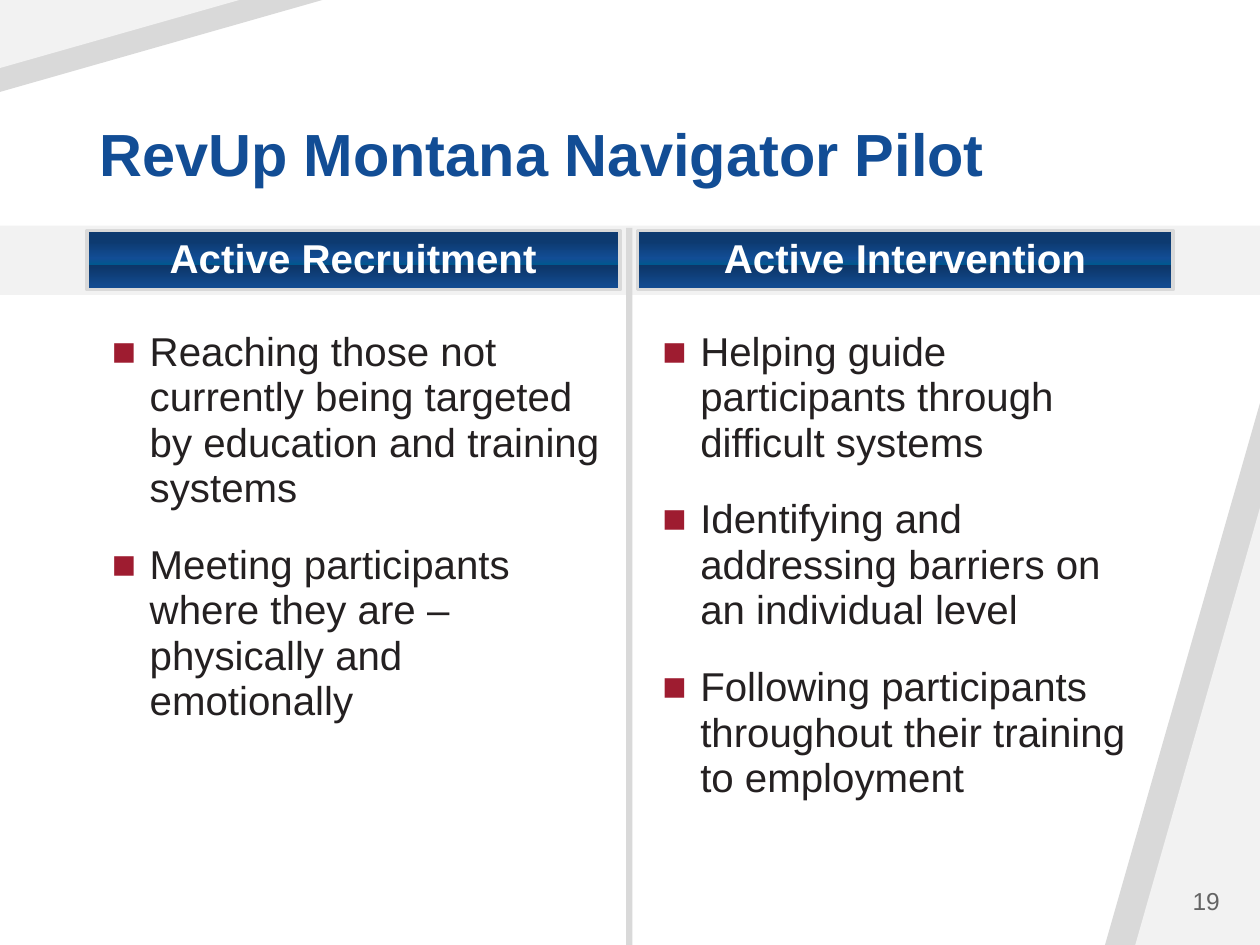
from lxml.etree import SubElement
from pptx import Presentation
from pptx.dml.color import RGBColor
from pptx.enum.shapes import MSO_SHAPE
from pptx.enum.text import MSO_ANCHOR, PP_ALIGN
from pptx.oxml import parse_xml
from pptx.oxml.ns import nsdecls, qn
from pptx.util import Inches, Pt

GRAY, PALE, BLUE, RED = "D9D9D9", "F2F2F2", "124D95", "9E1C30"
STOPS = [(19, "0D3A70"), (47, BLUE), (58, "00588F"), (59, "0D3668"), (100, BLUE)]
COLUMNS = [
    ("Active Recruitment", 0.69, 4.23, [
        "Reaching those not currently being targeted by education and training systems",
        "Meeting participants where they are – physically and emotionally",
    ]),
    ("Active Intervention", 5.06, 4.25, [
        "Helping guide participants through difficult systems",
        "Identifying and addressing barriers on an individual level",
        "Following participants throughout their training to employment",
    ]),
]


def paint(target, color):
    """Set a solid colour on a fill."""
    target.solid()
    target.fore_color.rgb = RGBColor.from_string(color)


def style(para, size, color, bold=False):
    font = para.font
    font.name, font.size, font.bold = "Arial", Pt(size), bold
    paint(font.fill, color)


def add_wedge(slide, points, color):
    """Draw a filled corner triangle."""
    first, *rest = [(Inches(x), Inches(y)) for x, y in points]
    pen = slide.shapes.build_freeform(*first)
    pen.add_line_segments(rest)
    shape = pen.convert_to_shape()
    paint(shape.fill, color)
    shape.line.fill.background()
    shape.shadow.inherit = False


def add_bar(slide, left, top, width, height, color):
    shape = slide.shapes.add_shape(
        MSO_SHAPE.RECTANGLE, Inches(left), Inches(top), Inches(width), Inches(height))
    paint(shape.fill, color)
    shape.line.fill.background()
    shape.shadow.inherit = False
    return shape


def add_text(slide, left, top, width, height, text, anchor):
    box = slide.shapes.add_textbox(
        Inches(left), Inches(top), Inches(width), Inches(height))
    frame = box.text_frame
    frame.word_wrap = True
    frame.vertical_anchor = anchor
    frame.text = text
    return frame


def shade(shape):
    """Replace the solid fill with the banded blue gradient."""
    stops = "".join(
        f'<a:gs pos="{pos * 1000}"><a:srgbClr val="{color}"/></a:gs>'
        for pos, color in STOPS)
    grad = parse_xml(
        f'<a:gradFill {nsdecls("a")} rotWithShape="1"><a:gsLst>{stops}</a:gsLst>'
        '<a:lin ang="5400000" scaled="0"/></a:gradFill>')
    props = shape.fill._xPr
    props.replace(props.find(qn("a:solidFill")), grad)


def add_header(slide, left, width, text):
    shape = add_bar(slide, left, 1.83, width, 0.47, BLUE)
    shade(shape)
    paint(shape.line.fill, GRAY)
    shape.line.width = Pt(2)
    frame = shape.text_frame
    frame.word_wrap = True
    frame.vertical_anchor = MSO_ANCHOR.MIDDLE
    frame.margin_left = frame.margin_right = Inches(0.05)
    frame.margin_top = frame.margin_bottom = Inches(0.06)
    frame.text = text
    para = frame.paragraphs[0]
    para.alignment = PP_ALIGN.CENTER
    para.line_spacing = 0.9
    style(para, 23, "FFFFFF", True)


def add_bullet(para):
    props = para._p.get_or_add_pPr()
    props.set("marL", str(Inches(0.3)))
    props.set("indent", str(-Inches(0.3)))
    tint = SubElement(props, qn("a:buClr"))
    SubElement(tint, qn("a:srgbClr"), val=RED)
    SubElement(props, qn("a:buFont"), typeface="Arial")
    SubElement(props, qn("a:buChar"), char="■")


def add_list(slide, left, items):
    frame = add_text(slide, left, 2.57, 4.1, 4.2, "\n".join(items), MSO_ANCHOR.TOP)
    for index, para in enumerate(frame.paragraphs):
        add_bullet(para)
        para.line_spacing = 0.94
        para.space_before = Pt(18 if index else 0)
        style(para, 23, "242021")


def add_backdrop(slide):
    for x, y, color in [(8.77, 3.2, GRAY), (9.01, 4.03, PALE)]:
        add_wedge(slide, [(10, y), (10, 7.5), (x, 7.5)], color)
    for x, y, color in [(2.56, 0.73, GRAY), (1.9, 0.54, PALE)]:
        add_wedge(slide, [(0, 0), (x, 0), (0, y)], color)
    add_bar(slide, 0, 1.79, 10, 0.55, PALE)
    add_bar(slide, 4.97, 1.81, 0.05, 5.7, GRAY)


def main():
    deck = Presentation()
    deck.slide_width, deck.slide_height = Inches(10), Inches(7.5)
    slide = deck.slides.add_slide(deck.slide_layouts[6])
    add_backdrop(slide)

    title = add_text(slide, 0.69, 0.4, 8.62, 1.15,
                     "RevUp Montana Navigator Pilot", MSO_ANCHOR.BOTTOM).paragraphs[0]
    title.line_spacing = 0.9
    style(title, 34, BLUE, True)

    for head, left, width, items in COLUMNS:
        add_header(slide, left, width, head)
        add_list(slide, left + 0.1, items)

    number = add_text(slide, 8.96, 6.95, 0.82, 0.4, "19", MSO_ANCHOR.MIDDLE).paragraphs[0]
    number.alignment = PP_ALIGN.RIGHT
    style(number, 14, "646464")
    deck.save("out.pptx")


if __name__ == "__main__":
    main()
